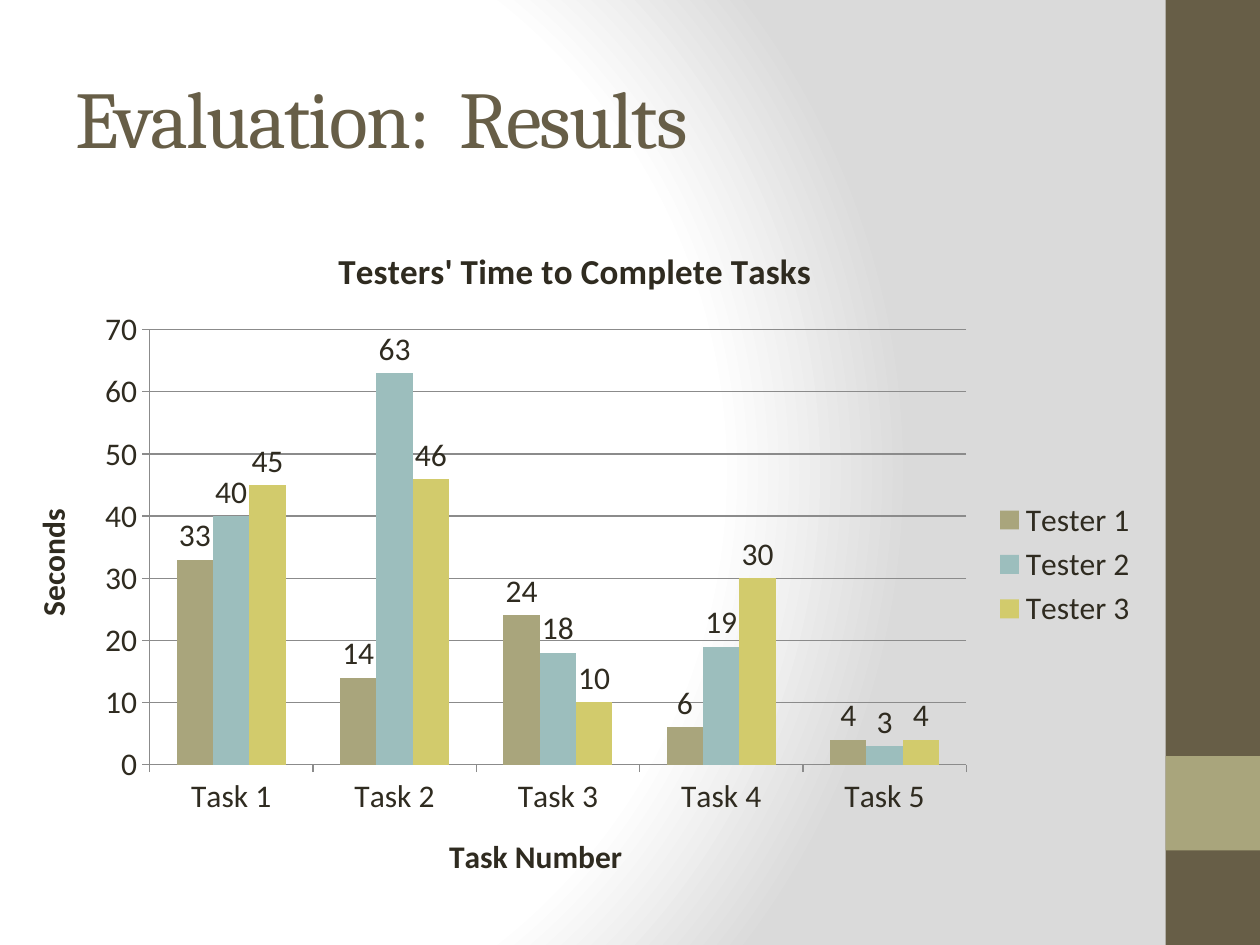
from pptx import Presentation
from pptx.chart.data import CategoryChartData
from pptx.dml.color import RGBColor
from pptx.enum.chart import XL_CHART_TYPE, XL_LABEL_POSITION, XL_LEGEND_POSITION, XL_TICK_MARK
from pptx.enum.shapes import MSO_SHAPE
from pptx.enum.text import MSO_ANCHOR, PP_ALIGN
from pptx.oxml import parse_xml
from pptx.oxml.ns import nsdecls, qn
from pptx.util import Inches, Pt

COLUMNS = XL_CHART_TYPE.COLUMN_CLUSTERED
OUTSIDE_END = XL_LABEL_POSITION.OUTSIDE_END
LEGEND_RIGHT = XL_LEGEND_POSITION.RIGHT
TICK_OUTSIDE = XL_TICK_MARK.OUTSIDE
RECTANGLE = MSO_SHAPE.RECTANGLE
MIDDLE = MSO_ANCHOR.MIDDLE
LEFT = PP_ALIGN.LEFT

BROWN, KHAKI, INK, GRAY = "675E47", "A9A57C", "2F2B20", "8B8B8B"


def color(hex_string):
    return RGBColor.from_string(hex_string)


def format_font(font, size, hex_string, name="Calibri", bold=False):
    font.size = Pt(size)
    font.name = name
    font.bold = bold
    font.color.rgb = color(hex_string)


deck = Presentation()
deck.slide_width = Inches(10)
deck.slide_height = Inches(7.5)
slide = deck.slides.add_slide(deck.slide_layouts[5])

# Background: radial gradient from white to light gray
slide.background.fill.solid()
solid_fill = slide.element.find(".//" + qn("p:bgPr")).find(qn("a:solidFill"))
stops = "".join(
    f'<a:gs pos="{percent * 1000}"><a:srgbClr val="{shade}"/></a:gs>'
    for percent, shade in [(0, "FFFFFF"), (75, "FFFFFF"), (100, "DADADA")]
)
gradient = parse_xml(
    f'<a:gradFill {nsdecls("a")} rotWithShape="1"><a:gsLst>{stops}</a:gsLst>'
    '<a:path path="circle"><a:fillToRect l="20000" t="50000" r="100000" b="50000"/>'
    "</a:path></a:gradFill>"
)
solid_fill.getparent().replace(solid_fill, gradient)

# Side band and its accent square
for top, height, fill in [(0, 7.5, BROWN), (6, 0.75, KHAKI)]:
    band = slide.shapes.add_shape(
        RECTANGLE, Inches(9.25), Inches(top), Inches(0.75), Inches(height))
    band.shadow.inherit = False
    band.fill.solid()
    band.fill.fore_color.rgb = color(fill)
    band.line.fill.background()

# Title
title = slide.shapes.title
title.left, title.top = Inches(0.5), Inches(0.3)
title.width, title.height = Inches(8.33), Inches(1.25)
title.text_frame.vertical_anchor = MIDDLE
para = title.text_frame.paragraphs[0]
para.alignment = LEFT
span = para.add_run()
span.text = "Evaluation:  Results"
format_font(span.font, 46, BROWN, "Cambria")
span.font._element.set("spc", "-100")

# Chart data
testers = [
    ("Tester 1", (33, 14, 24, 6, 4), KHAKI),
    ("Tester 2", (40, 63, 18, 19, 3), "9CBEBD"),
    ("Tester 3", (45, 46, 10, 30, 4), "D2CB6C"),
]
data = CategoryChartData()
data.categories = [f"Task {number}" for number in range(1, 6)]
for name, seconds, _ in testers:
    data.add_series(name, seconds)
chart = slide.shapes.add_chart(
    COLUMNS, Inches(0), Inches(1.74), Inches(9.13), Inches(5.48), data).chart
format_font(chart.font, 10, INK)

# Columns and their value labels
plot = chart.plots[0]
plot.gap_width = 150
plot.overlap = 0
plot.vary_by_categories = False
for series, (_, _, fill) in zip(plot.series, testers):
    series.format.fill.solid()
    series.format.fill.fore_color.rgb = color(fill)
    labels = series.data_labels
    labels.show_value = True
    labels.position = OUTSIDE_END
    format_font(labels.font, 18, INK)

# Axes, chart title and legend
chart.has_title = True
value_axis = chart.value_axis
value_axis.minimum_scale, value_axis.maximum_scale = 0, 70
value_axis.major_unit = 10
value_axis.has_major_gridlines = True
value_axis.major_gridlines.format.line.color.rgb = color(GRAY)
for axis in (chart.category_axis, value_axis):
    axis.major_tick_mark = TICK_OUTSIDE
    axis.format.line.color.rgb = color(GRAY)
    format_font(axis.tick_labels.font, 18, INK)
for owner, text, size in [
    (chart, "Testers' Time to Complete Tasks", 20),
    (chart.category_axis, "Task Number", 18),
    (value_axis, "Seconds", 18),
]:
    heading = owner.chart_title if owner is chart else owner.axis_title
    span = heading.text_frame.paragraphs[0].add_run()
    span.text = text
    format_font(span.font, size, INK, bold=True)
chart.has_legend = True
chart.legend.position = LEGEND_RIGHT
chart.legend.include_in_layout = False
format_font(chart.legend.font, 18, INK)

# Plot area, as shares of the chart's size
plot_area = chart.element.find(".//" + qn("c:plotArea"))
for layout in plot_area.findall(qn("c:layout")):
    plot_area.remove(layout)
shares = "".join(
    f'<c:{side} val="{share}"/>'
    for side, share in [("x", 0.13), ("y", 0.16), ("w", 0.71), ("h", 0.63)]
)
plot_area.insert(0, parse_xml(
    f'<c:layout {nsdecls("c")}><c:manualLayout><c:layoutTarget val="inner"/>'
    f'<c:xMode val="edge"/><c:yMode val="edge"/>{shares}</c:manualLayout></c:layout>'))

deck.save("out.pptx")
